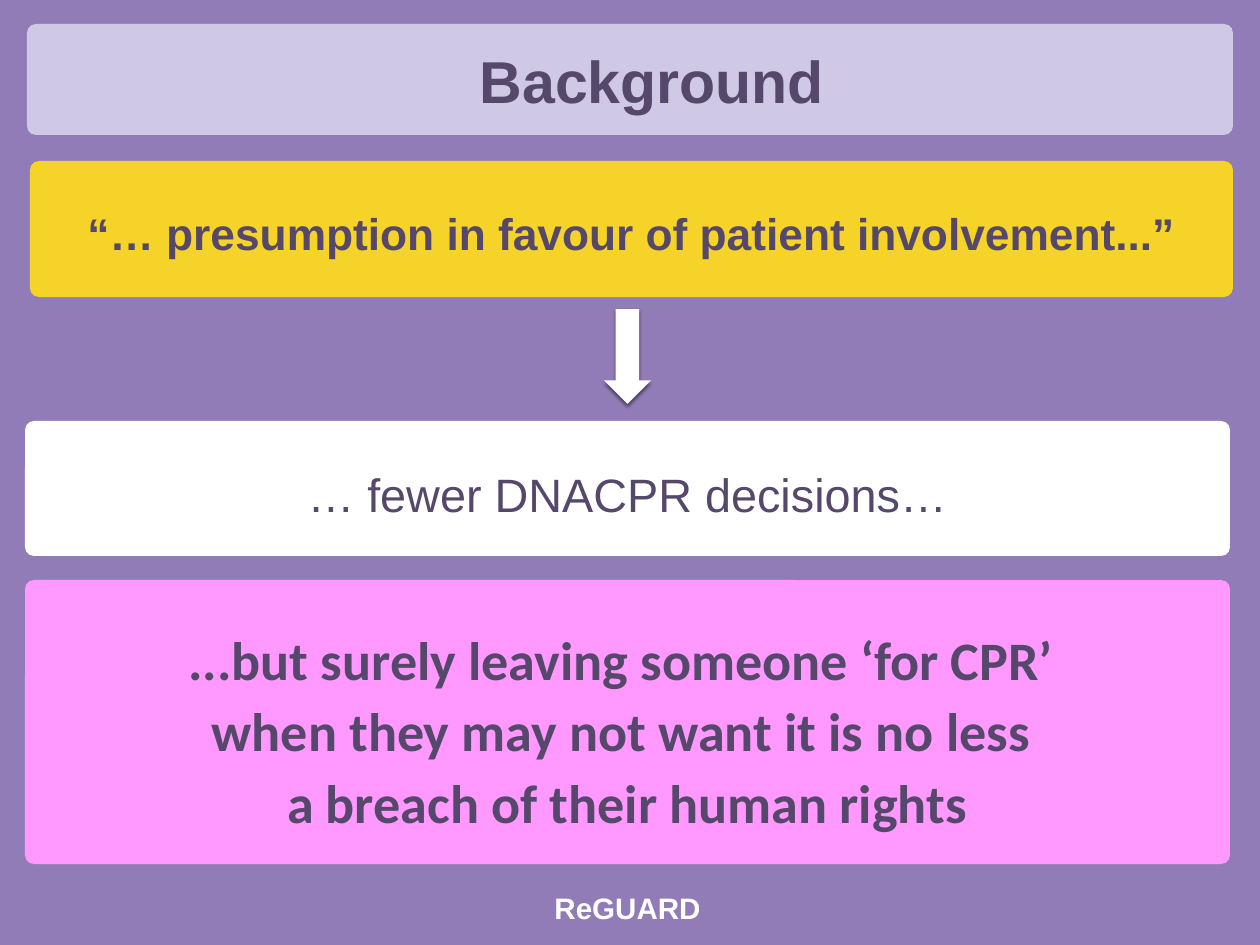
"""Build the Background slide on patient involvement and DNACPR decisions."""
from dataclasses import dataclass

import pptx
import pptx.dml.color
import pptx.enum.shapes
import pptx.enum.text
import pptx.oxml
import pptx.oxml.ns
import pptx.util

TITLE = ("Background", (27, 24, 1206, 111))
FOOTER = ("ReGUARD", (511, 879, 233, 58))
ARROW = (604, 309, 47, 95)
STATEMENTS = [
    {"lines": ["“… presumption in favour of patient involvement...”"],
     "box": (30, 161, 1203, 136), "fill": "F5D328", "font": "Arial", "size": 36, "bold": True},
    {"lines": ["… fewer DNACPR decisions…"],
     "box": (25, 421, 1205, 135), "fill": "FFFFFF", "font": "Arial", "size": 38, "bold": False},
    {"lines": ["...but surely leaving someone ‘for CPR’ ",
               "when they may not want it is no less ",
               "a breach of their human rights"],
     "box": (25, 580, 1205, 284), "fill": "FF99FF", "font": "Calibri", "size": 44, "bold": True},
]


@dataclass(frozen=True)
class Theme:
    background: str = "927CB8"
    title_fill: str = "D0C9E5"
    ink: str = "56486A"
    white: str = "FFFFFF"
    font: str = "Arial"
    title_size: int = 48
    footer_size: int = 24


THEME = Theme()
PX = 10320
RADIUS = 9
TITLE_INDENT = 44
STATEMENT_INSET = 37
FOOTER_INSET = 5
SHAPE = pptx.enum.shapes.MSO_SHAPE
ANCHOR = pptx.enum.text.MSO_ANCHOR
NS = pptx.oxml.ns.nsdecls("a")


def emu(box):
    return [v * PX for v in box]


def paint(fill, color):
    fill.solid()
    fill.fore_color.rgb = pptx.dml.color.RGBColor.from_string(color)


def write(sp, lines, font, size, color, bold, inset, anchor, spacing=1.0):
    tf = sp.text_frame
    tf.word_wrap = True
    tf.auto_size = pptx.enum.text.MSO_AUTO_SIZE.NONE
    tf.vertical_anchor = anchor
    tf.margin_left = tf.margin_top = tf.margin_right = tf.margin_bottom = inset * PX
    tf.text = "\n".join(lines)
    for p in tf.paragraphs:
        p.alignment = pptx.enum.text.PP_ALIGN.CENTER
        p.line_spacing = spacing
        p.font.name, p.font.size, p.font.bold = font, pptx.util.Pt(size), bold
        p.font.color.rgb = pptx.dml.color.RGBColor.from_string(color)


def add_filled(slide, kind, box, color):
    sp = slide.shapes.add_shape(kind, *emu(box))
    sp.shadow.inherit = False
    sp.line.fill.background()
    paint(sp.fill, color)
    return sp


def add_panel(slide, box, color):
    sp = add_filled(slide, SHAPE.ROUNDED_RECTANGLE, box, color)
    sp.adjustments[0] = RADIUS / box[3]
    return sp


def add_title(slide):
    text, box = TITLE
    panel = add_panel(slide, box, THEME.title_fill)
    sp = slide.shapes.title
    panel._element.addnext(sp._element)
    sp.left, sp.top, sp.width, sp.height = emu(box)
    write(sp, [text], THEME.font, THEME.title_size, THEME.ink, True, 0, ANCHOR.MIDDLE)
    pPr = sp.text_frame.paragraphs[0]._p.get_or_add_pPr()
    pPr.set("marL", str(TITLE_INDENT * PX))
    pPr.set("indent", "0")


def add_statement(slide, item):
    sp = add_panel(slide, item["box"], item["fill"])
    write(sp, item["lines"], item["font"], item["size"], THEME.ink, item["bold"],
          STATEMENT_INSET, ANCHOR.TOP, 1.1)


def add_arrow(slide):
    sp = add_filled(slide, SHAPE.DOWN_ARROW, ARROW, THEME.white)
    effects = sp._element.spPr.find(pptx.oxml.ns.qn("a:effectLst"))
    effects.append(pptx.oxml.parse_xml(
        f'<a:outerShdw {NS} blurRad="38100" dist="25400" dir="5400000" rotWithShape="0">'
        '<a:srgbClr val="000000"><a:alpha val="50000"/></a:srgbClr></a:outerShdw>'))


def add_footer(slide):
    text, box = FOOTER
    sp = slide.shapes.add_textbox(*emu(box))
    write(sp, [text], THEME.font, THEME.footer_size, THEME.white, True,
          FOOTER_INSET, ANCHOR.MIDDLE)


def main():
    prs = pptx.Presentation()
    prs.slide_width, prs.slide_height = emu((1260, 945))
    slide = prs.slides.add_slide(prs.slide_layouts[5])
    paint(slide.background.fill, THEME.background)
    add_title(slide)
    for item in STATEMENTS:
        add_statement(slide, item)
    add_arrow(slide)
    add_footer(slide)
    prs.save("out.pptx")


if __name__ == "__main__":
    main()
